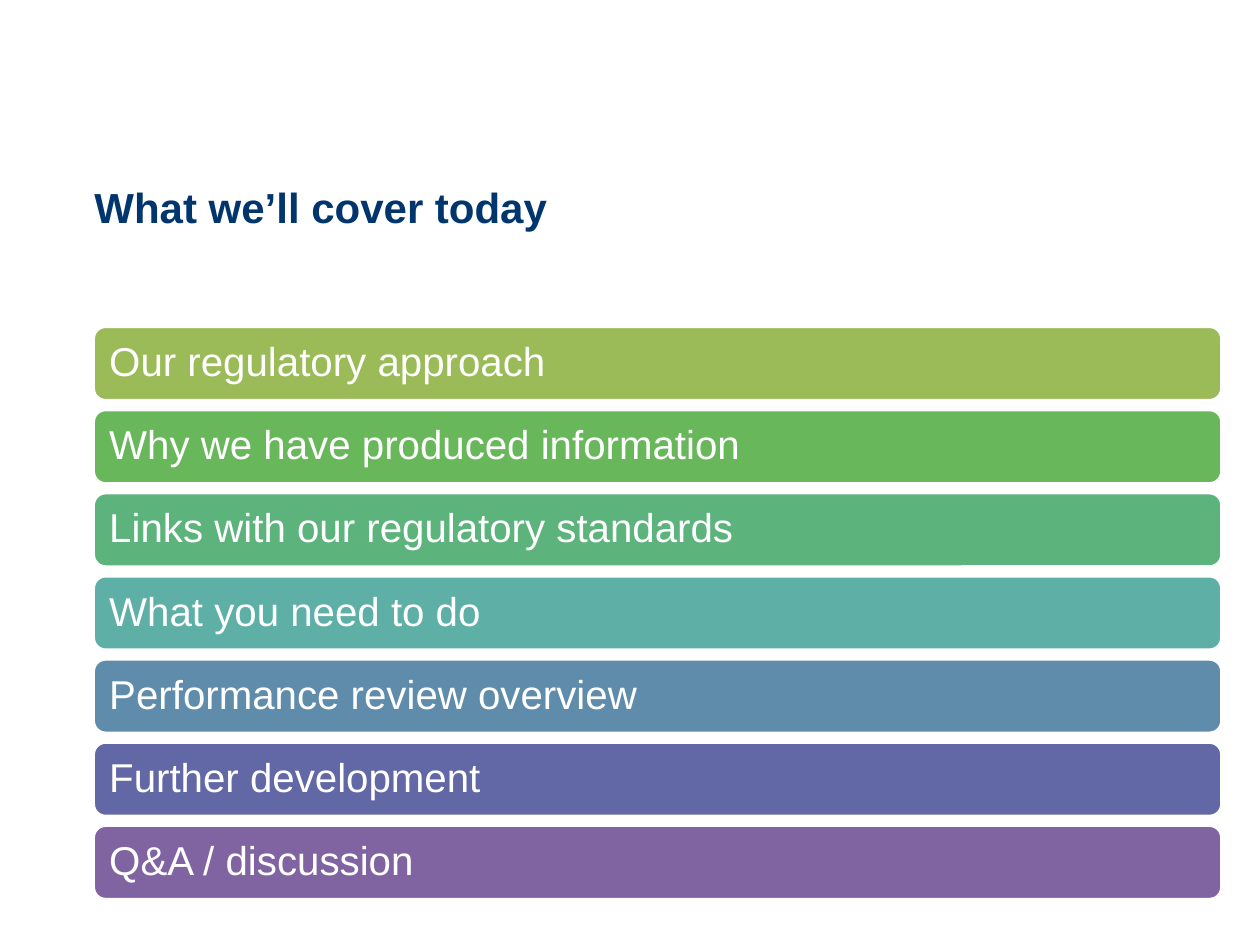
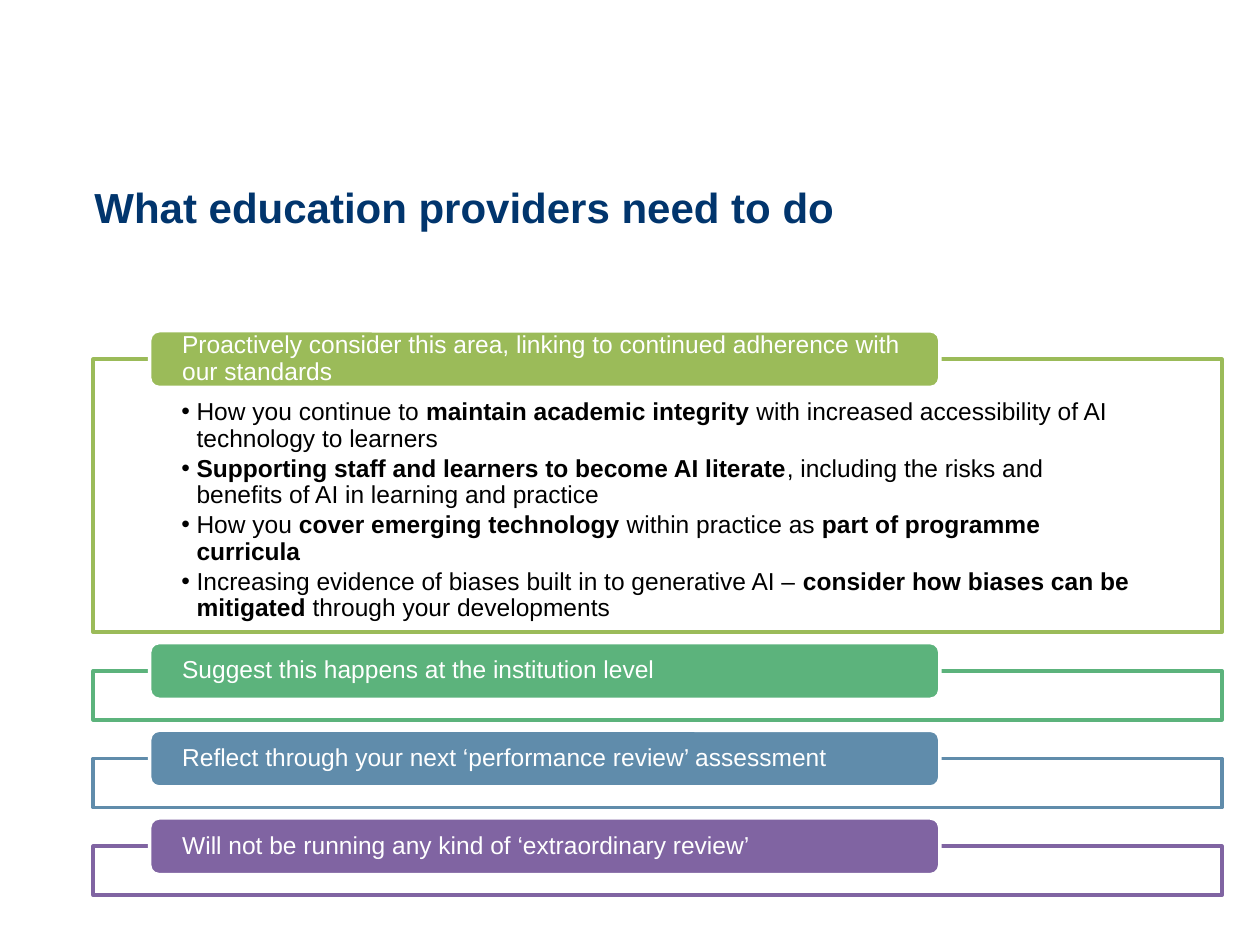
from pptx import Presentation
from pptx.dml.color import RGBColor
from pptx.enum.shapes import MSO_SHAPE
from pptx.enum.text import MSO_ANCHOR, PP_ALIGN
from pptx.util import Pt
from lxml.etree import SubElement
from pptx.oxml.ns import qn

FONT = "Arial"
NAVY, WHITE, BLACK = "01356D", "FFFFFF", "000000"
OLIVE, GREEN, JADE, TEAL = "9BBB59", "69B75B", "5CB37C", "5EAFA6"
BLUE, INDIGO, PURPLE = "608CAB", "6267A6", "8064A2"

TITLE_BOX = (54, 103.5, 645, 36.7)
AGENDA_BOX = (53.3, 186.5, 645, 327.6)
ACTIONS_BOX = (53.3, 189, 645, 322.6)

AGENDA = [
    ("Our regulatory approach", OLIVE),
    ("Why we have produced information", GREEN),
    ("Links with our regulatory standards", JADE),
    ("What you need to do", TEAL),
    ("Performance review overview", BLUE),
    ("Further development", INDIGO),
    ("Q&A / discussion", PURPLE),
]

# Each point is a list of (text, bold) runs.
POINTS = [
    [("How you continue to ", False), ("maintain academic integrity ", True),
     ("with increased accessibility of AI technology to learners", False)],
    [("Supporting staff and learners to become AI literate", True),
     (", including the risks and benefits of AI in learning and practice", False)],
    [("How you ", False), ("cover emerging technology", True),
     (" within practice as ", False), ("part of programme curricula", True)],
    [("Increasing evidence of biases built in to generative AI – ", False),
     ("consider how biases can be mitigated", True),
     (" through your developments", False)],
]

ACTIONS = [
    ("Proactively consider this area, linking to continued adherence with our standards",
     OLIVE, POINTS),
    ("Suggest this happens at the institution level", JADE, []),
    ("Reflect through your next ‘performance review’ assessment", BLUE, []),
    ("Will not be running any kind of ‘extraordinary review’", PURPLE, []),
]


def rgb(hex_colour):
    return RGBColor.from_string(hex_colour)


def set_up_frame(frame, insets, anchor):
    frame.word_wrap = True
    frame.vertical_anchor = anchor
    (frame.margin_left, frame.margin_top,
     frame.margin_right, frame.margin_bottom) = map(Pt, insets)


def add_run(paragraph, text, size, colour, bold=False):
    run = paragraph.add_run()
    run.text = text
    run.font.name = FONT
    run.font.size = Pt(size)
    run.font.bold = bold
    run.font.color.rgb = rgb(colour)


def add_panel(slide, preset, box, fill, outline):
    panel = slide.shapes.add_shape(preset, *map(Pt, box))
    panel.shadow.inherit = False
    panel.fill.solid()
    panel.fill.fore_color.rgb = rgb(fill)
    panel.line.color.rgb = rgb(outline)
    panel.line.width = Pt(2)
    return panel


def add_label_bar(slide, box, text, colour, size, insets):
    bar = add_panel(slide, MSO_SHAPE.ROUNDED_RECTANGLE, box, colour, WHITE)
    set_up_frame(bar.text_frame, insets, MSO_ANCHOR.MIDDLE)
    label = bar.text_frame.paragraphs[0]
    label.alignment = PP_ALIGN.LEFT
    label.line_spacing = 0.9
    add_run(label, text, size, WHITE)


def add_title(slide, text, box=TITLE_BOX):
    title = slide.shapes.add_textbox(*map(Pt, box))
    set_up_frame(title.text_frame, (0, 0, 7.2, 0), MSO_ANCHOR.TOP)
    add_run(title.text_frame.paragraphs[0], text, 24, NAVY, bold=True)


def add_agenda(slide, box):
    left, top, width, height = box
    gap = 5
    bar_height = (height - gap * (len(AGENDA) - 1)) / len(AGENDA)
    for row, (topic, colour) in enumerate(AGENDA):
        bar_top = top + row * (bar_height + gap)
        add_label_bar(slide, (left, bar_top, width, bar_height),
                      topic, colour, 23, (7.2, 7.2, 7.2, 7.2))


def add_points(frame, points):
    set_up_frame(frame, (50.4, 23, 50.4, 8), MSO_ANCHOR.TOP)
    for index, runs in enumerate(points):
        point = frame.add_paragraph() if index else frame.paragraphs[0]
        properties = point._p.get_or_add_pPr()
        properties.set("marL", str(Pt(8.64)))
        properties.set("indent", str(-Pt(8.64)))
        SubElement(properties, qn("a:buFont"), typeface=FONT)
        SubElement(properties, qn("a:buChar"), char="•")
        point.alignment = PP_ALIGN.LEFT
        point.line_spacing = 0.9
        point.space_after = Pt(2.1)
        for text, bold in runs:
            add_run(point, text, 14, BLACK, bold)


def add_actions(slide, box):
    """Stack outlined frames, each with a heading tab across its top edge."""
    left, top, width, height = box
    tab_height, overhang, gap = 32.4, 16.2, 22.1
    empty_height = 28
    others = len(ACTIONS) - 1
    full_height = height - overhang - others * (empty_height + gap)
    frame_top = top + overhang
    for heading, colour, points in ACTIONS:
        frame_height = full_height if points else empty_height
        frame = add_panel(slide, MSO_SHAPE.RECTANGLE,
                          (left, frame_top, width, frame_height), WHITE, colour)
        if points:
            add_points(frame.text_frame, points)
        tab_box = (left + width * 0.05, frame_top - overhang, width * 0.7, tab_height)
        add_label_bar(slide, tab_box, heading, colour, 14, (17, 0, 17, 0))
        frame_top += frame_height + gap


def main():
    deck = Presentation()
    deck.slide_width, deck.slide_height = Pt(720), Pt(540)
    blank = deck.slide_layouts[6]

    agenda = deck.slides.add_slide(blank)
    add_title(agenda, "What we’ll cover today")
    add_agenda(agenda, AGENDA_BOX)

    actions = deck.slides.add_slide(blank)
    add_title(actions, "What education providers need to do")
    add_actions(actions, ACTIONS_BOX)

    deck.save("out.pptx")


if __name__ == "__main__":
    main()
